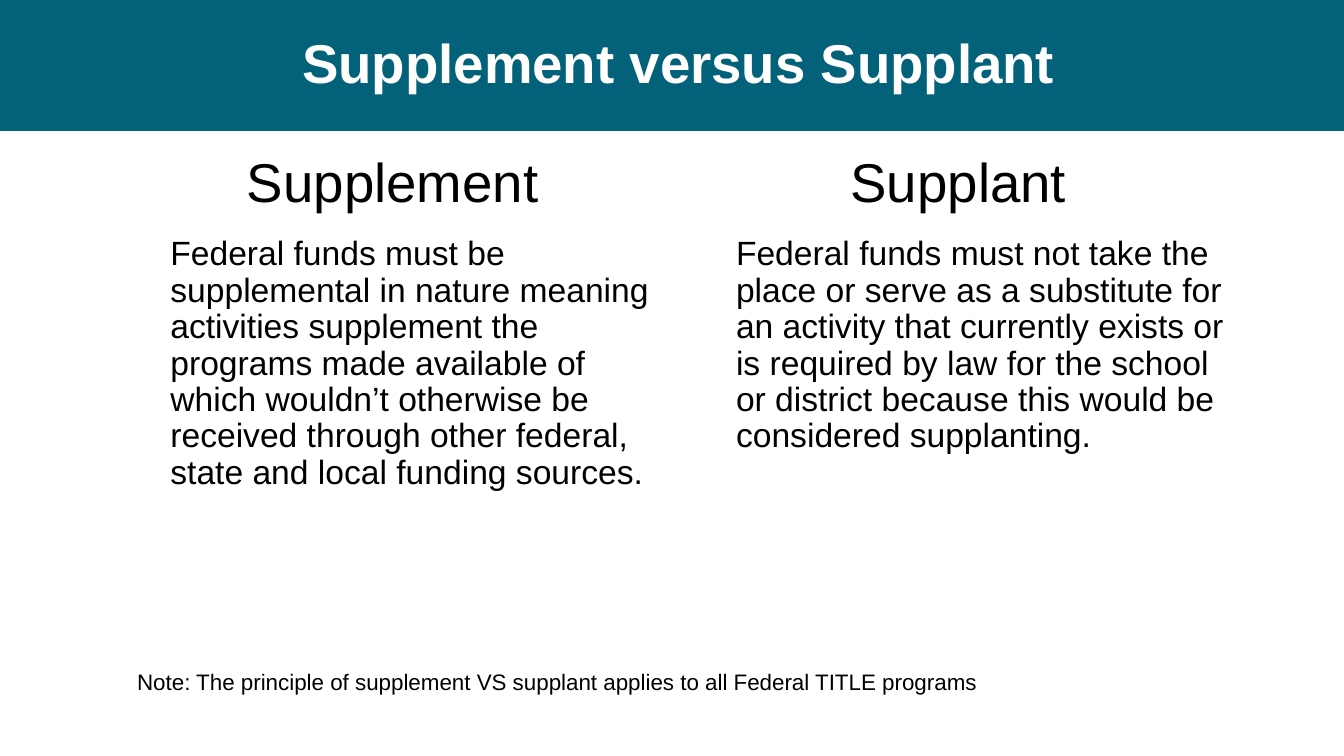
from pptx import Presentation
from pptx.dml.color import RGBColor
from pptx.enum.shapes import MSO_SHAPE
from pptx.enum.text import MSO_ANCHOR, PP_ALIGN
from pptx.oxml.ns import qn
from pptx.util import Inches, Pt

TITLE = "Supplement versus Supplant"
COLUMNS = [
    ("Supplement",
     "Federal funds must be supplemental in nature meaning activities supplement the "
     "programs made available of which wouldn’t otherwise be received through other "
     "federal, state and local funding sources."),
    ("Supplant",
     "Federal funds must not take the place or serve as a substitute for an activity "
     "that currently exists or is required by law for the school or district because "
     "this would be considered supplanting."),
]
NOTE = "Note: The principle of supplement VS supplant applies to all Federal TITLE programs"

TEAL = RGBColor(0x03, 0x61, 0x7A)
WHITE = RGBColor(0xFF, 0xFF, 0xFF)
BLACK = RGBColor(0, 0, 0)
CENTER, LEFT = PP_ALIGN.CENTER, PP_ALIGN.LEFT
TOP, MIDDLE = MSO_ANCHOR.TOP, MSO_ANCHOR.MIDDLE
RECTANGLE = MSO_SHAPE.RECTANGLE
PLAIN_TABLE_STYLE = "{2D5ABB26-0587-4C30-8999-92F81FD0307C}"

SLIDE_WIDTH, SLIDE_HEIGHT = 13.33, 7.5
BAND_HEIGHT = 1.3
COLUMN_WIDTH = 5.61
ROW_HEIGHTS = [0.78, 4.04]
CELL_MARGIN = 0.1
BODY_INDENT = 0.5
ROW_FORMATS = [
    {"size": 39, "alignment": CENTER, "line_spacing": 0.9},
    {"size": 24, "alignment": LEFT, "line_spacing": 0.97, "indent": BODY_INDENT},
]


def write_text(text_frame, text, size, color=BLACK, bold=False,
               alignment=LEFT, line_spacing=1.0, indent=0):
    paragraph = text_frame.paragraphs[0]
    paragraph.alignment = alignment
    paragraph.line_spacing = line_spacing
    if indent:
        properties = paragraph._p.get_or_add_pPr()
        properties.set("marL", str(Inches(indent)))
        properties.set("indent", "0")
    run = paragraph.add_run()
    run.text = text
    font_format = {"name": "Arial", "size": Pt(size), "bold": bold}
    for attribute, value in font_format.items():
        setattr(run.font, attribute, value)
    run.font.color.rgb = color


def set_margins(target, left, top, right, bottom):
    margins = {"left": left, "top": top, "right": right, "bottom": bottom}
    for side, length in margins.items():
        setattr(target, f"margin_{side}", Inches(length))


def add_header(slide):
    band = slide.shapes.add_shape(
        RECTANGLE, 0, 0, Inches(SLIDE_WIDTH), Inches(BAND_HEIGHT))
    band.shadow.inherit = False
    band.fill.solid()
    band.fill.fore_color.rgb = TEAL
    band.line.fill.background()
    title = slide.shapes.title
    title._element.addprevious(band._element)
    place = {"left": 0.98, "top": 0, "width": 11.5, "height": BAND_HEIGHT}
    for attribute, length in place.items():
        setattr(title, attribute, Inches(length))
    title.text_frame.vertical_anchor = MIDDLE
    title.text_frame.word_wrap = True
    set_margins(title.text_frame, 0.1, 0.05, 0.1, 0.05)
    write_text(title.text_frame, TITLE, 39, WHITE, True, CENTER, 0.9)


def add_comparison(slide):
    frame = slide.shapes.add_table(
        len(ROW_HEIGHTS), len(COLUMNS), Inches(1.09), Inches(1.47),
        Inches(COLUMN_WIDTH * len(COLUMNS)), Inches(sum(ROW_HEIGHTS)))
    table = frame.table
    table.first_row = False
    table.horz_banding = False
    table._tbl.tblPr.find(qn("a:tableStyleId")).text = PLAIN_TABLE_STYLE
    for row, height in zip(table.rows, ROW_HEIGHTS):
        row.height = Inches(height)
    for column_index, texts in enumerate(COLUMNS):
        table.columns[column_index].width = Inches(COLUMN_WIDTH)
        for row_index, text in enumerate(texts):
            cell = table.cell(row_index, column_index)
            cell.fill.background()
            cell.vertical_anchor = TOP
            set_margins(cell, *[CELL_MARGIN] * 4)
            write_text(cell.text_frame, text, **ROW_FORMATS[row_index])


def add_note(slide):
    note = slide.shapes.add_textbox(
        Inches(1.14), Inches(6.53), Inches(11.16), Inches(0.47))
    note.text_frame.word_wrap = True
    set_margins(note.text_frame, 0.22, 0.1, 0.1, 0.1)
    write_text(note.text_frame, NOTE, 16)


def main():
    presentation = Presentation()
    presentation.slide_width = Inches(SLIDE_WIDTH)
    presentation.slide_height = Inches(SLIDE_HEIGHT)
    slide = presentation.slides.add_slide(presentation.slide_layouts[5])
    add_header(slide)
    add_comparison(slide)
    add_note(slide)
    presentation.save("out.pptx")


if __name__ == "__main__":
    main()
